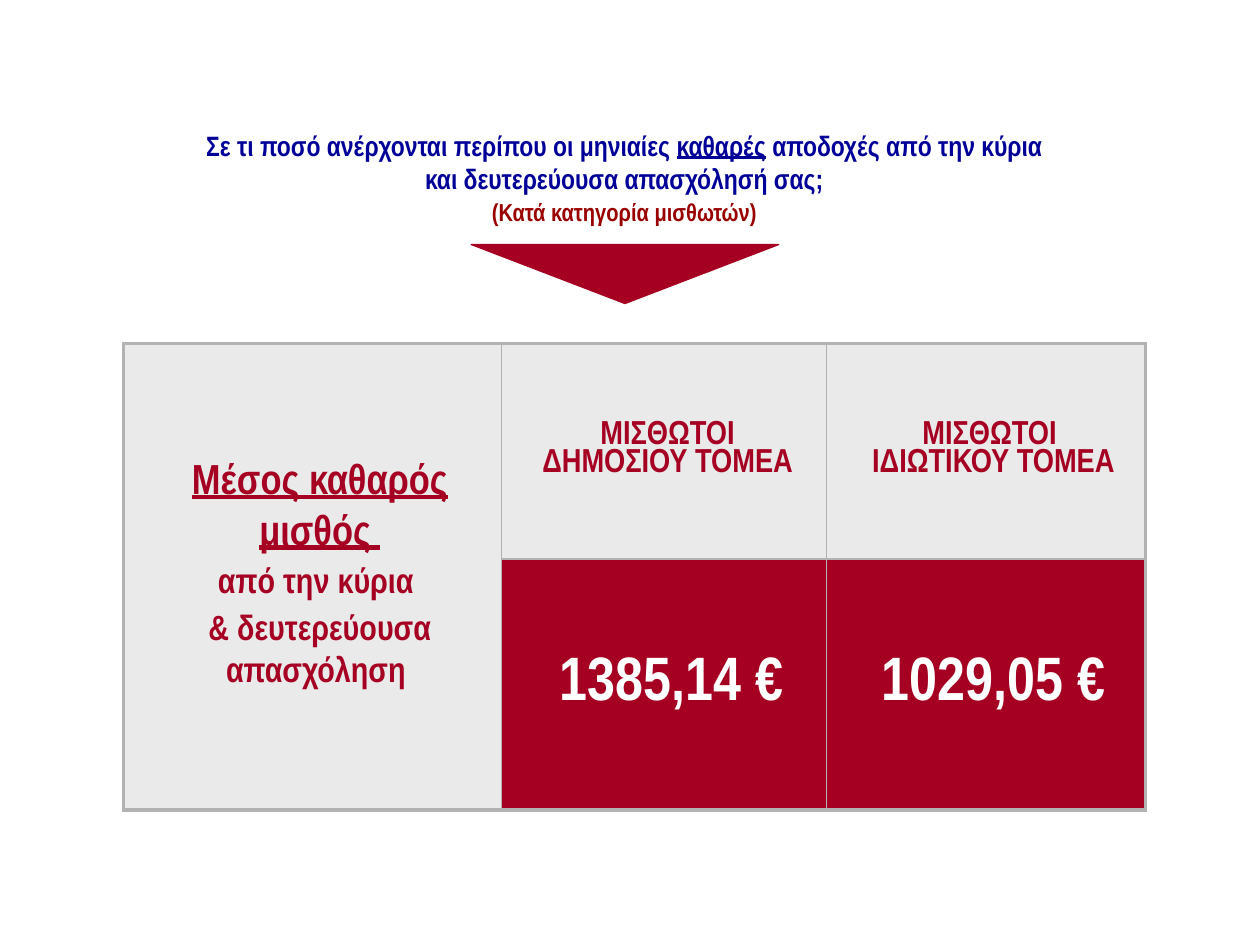
from lxml.etree import SubElement
from pptx import Presentation
from pptx.dml.color import RGBColor
from pptx.enum.shapes import MSO_SHAPE
from pptx.enum.text import MSO_ANCHOR, PP_ALIGN
from pptx.oxml.ns import qn
from pptx.util import Cm, Pt

FONT = "Arial Narrow"
NAVY = RGBColor(0x00, 0x00, 0x99)
RED = RGBColor(0x99, 0x00, 0x00)
CRIMSON = RGBColor(0xA5, 0x00, 0x21)
LIGHT = RGBColor(0xEA, 0xEA, 0xEA)
BORDER = RGBColor(0xB2, 0xB2, 0xB2)
WHITE = RGBColor(0xFF, 0xFF, 0xFF)

QUESTION = [
    [("Σε τι ποσό ανέρχονται περίπου οι μηνιαίες ", 16, NAVY, False),
     ("καθαρές", 16, NAVY, True),
     (" αποδοχές από την κύρια ", 16, NAVY, False)],
    [("και δευτερεύουσα απασχόλησή σας; ", 16, NAVY, False)],
    [("(Κατά κατηγορία μισθωτών)", 14, RED, False), (" ", 15, NAVY, False)],
]
ROW_LABEL = [
    [("Μέσος καθαρός μισθός ", 24, CRIMSON, True)],
    [("από την κύρια ", 20, CRIMSON, False)],
    [("& δευτερεύουσα απασχόληση ", 20, CRIMSON, False)],
]
GROUPS = [
    (["ΜΙΣΘΩΤΟΙ ", "ΔΗΜΟΣΙΟΥ ΤΟΜΕΑ "], "1385,14 €"),
    (["ΜΙΣΘΩΤΟΙ ", "ΙΔΙΩΤΙΚΟΥ ΤΟΜΕΑ"], "1029,05 €"),
]
COLUMN_WIDTHS = [Cm(7.62), Cm(6.55), Cm(6.43)]
ROW_HEIGHTS = [Cm(4.34), Cm(5.06)]
TABLE_LEFT, TABLE_TOP = Cm(2.49), Cm(6.93)
INDENT = Cm(0.3)
OUTER, INNER = Pt(2.25), Pt(1)


def write_text(text_frame, lines, indent=0, space_before=0, line_spacing=None):
    text_frame.word_wrap = True
    for index, runs in enumerate(lines):
        paragraph = text_frame.paragraphs[0] if index == 0 else text_frame.add_paragraph()
        paragraph.alignment = PP_ALIGN.CENTER
        paragraph.space_before = Pt(space_before)
        paragraph.line_spacing = line_spacing
        properties = paragraph._p.get_or_add_pPr()
        properties.set("marL", str(int(indent)))
        properties.set("indent", "0")
        for text, size, color, underline in runs:
            run = paragraph.add_run()
            run.text = text
            run.font.name = FONT
            run.font.size = Pt(size)
            run.font.bold = True
            run.font.underline = underline
            run.font.color.rgb = color


def format_cell(cell, fill, edges):
    cell.vertical_anchor = MSO_ANCHOR.MIDDLE
    properties = cell._tc.get_or_add_tcPr()
    for side, width in zip("LRTB", edges):
        line = SubElement(properties, qn(f"a:ln{side}"), w=str(int(width)))
        solid = SubElement(line, qn("a:solidFill"))
        SubElement(solid, qn("a:srgbClr"), val=str(BORDER))
    cell.fill.solid()
    cell.fill.fore_color.rgb = fill


def add_question(slide):
    box = slide.shapes.add_textbox(0, Cm(2.46), Cm(25.3), Cm(2.26))
    write_text(box.text_frame, QUESTION)
    pointer = slide.shapes.add_shape(
        MSO_SHAPE.FLOWCHART_MERGE, Cm(9.5), Cm(4.93), Cm(6.2), Cm(1.19))
    pointer.shadow.inherit = False
    pointer.fill.solid()
    pointer.fill.fore_color.rgb = CRIMSON
    pointer.line.color.rgb = CRIMSON
    pointer.line.width = Pt(0.75)


def add_salary_table(slide):
    table = slide.shapes.add_table(
        2, 3, TABLE_LEFT, TABLE_TOP, sum(COLUMN_WIDTHS), sum(ROW_HEIGHTS)).table
    table.first_row = table.horz_banding = False
    for column, width in zip(table.columns, COLUMN_WIDTHS):
        column.width = width
    for row, height in zip(table.rows, ROW_HEIGHTS):
        row.height = height
    table.cell(0, 0).merge(table.cell(1, 0))
    for row in range(2):
        format_cell(table.cell(row, 0), LIGHT, (OUTER, INNER, OUTER, OUTER))
    for column, (heading, amount) in enumerate(GROUPS, start=1):
        right = OUTER if column == len(GROUPS) else INNER
        header, value = table.cell(0, column), table.cell(1, column)
        format_cell(header, LIGHT, (INNER, right, OUTER, INNER))
        format_cell(value, CRIMSON, (INNER, right, INNER, OUTER))
        write_text(header.text_frame, [[(line, 19, CRIMSON, False)] for line in heading],
                   INDENT, 3, 0.76)
        write_text(value.text_frame, [[(amount, 35, WHITE, False)]], INDENT, 3)


def main():
    presentation = Presentation()
    presentation.slide_width, presentation.slide_height = Cm(25.4), Cm(19.05)
    slide = presentation.slides.add_slide(presentation.slide_layouts[6])
    add_question(slide)
    add_salary_table(slide)
    label = slide.shapes.add_textbox(TABLE_LEFT, Cm(9), COLUMN_WIDTHS[0], Cm(5.08))
    write_text(label.text_frame, ROW_LABEL, INDENT, 3)
    presentation.save("out.pptx")


if __name__ == "__main__":
    main()
